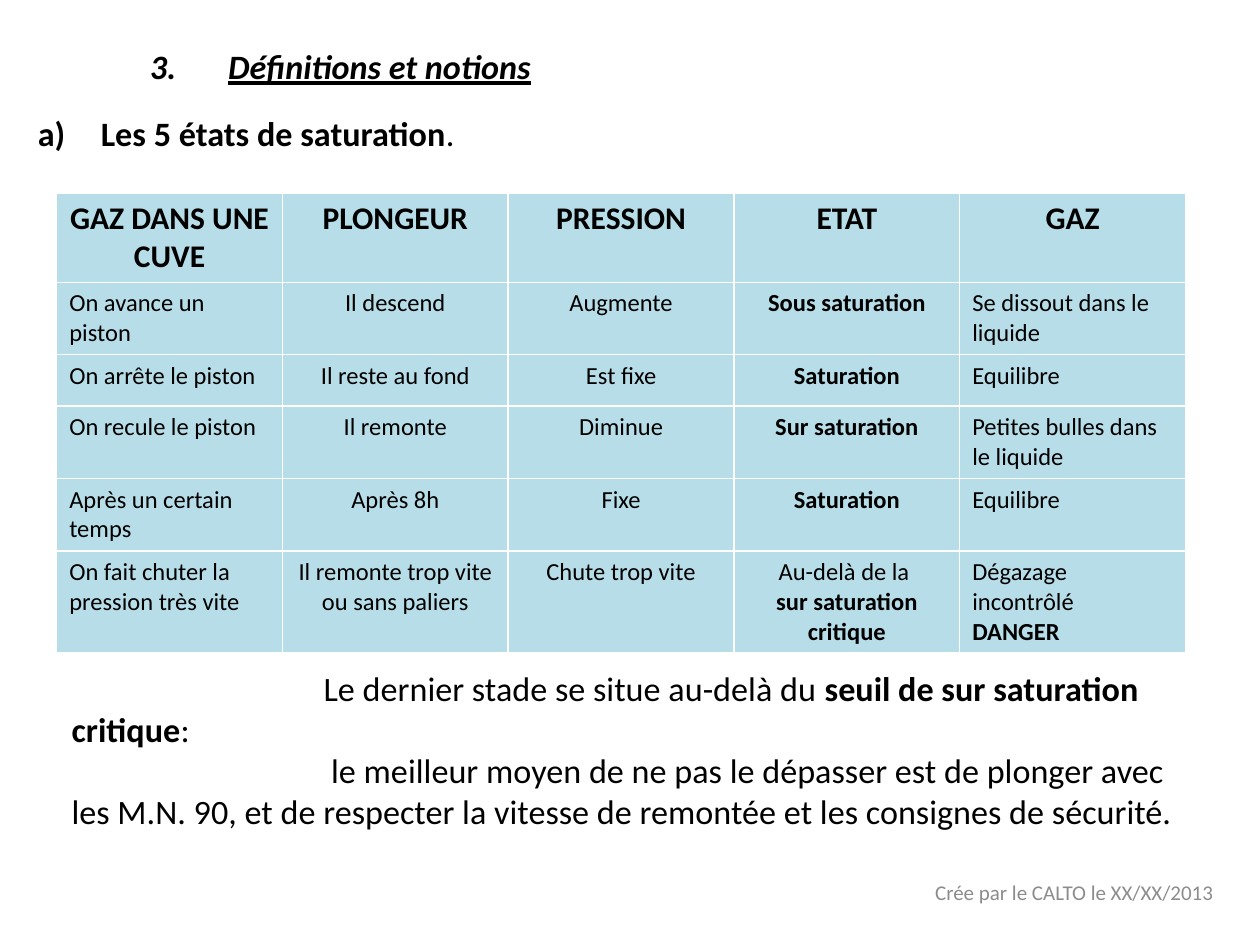
from lxml.etree import SubElement
from pptx import Presentation
from pptx.dml.color import RGBColor
from pptx.enum.text import MSO_ANCHOR, MSO_AUTO_SIZE, PP_ALIGN
from pptx.oxml.ns import qn
from pptx.util import Inches, Pt

BLACK = RGBColor(0x00, 0x00, 0x00)
GREY = RGBColor(0x8C, 0x8C, 0x8C)
PALE_BLUE = RGBColor(0xB7, 0xDE, 0xE8)
FONT = "Calibri"
TEXT_SIZE, HEADER_SIZE, CELL_SIZE, FOOTER_SIZE = 19.5, 18, 14, 12

TITLE = "Définitions et notions"
SUBTITLE = [("Les 5 états de saturation", True), (".", False)]
HEADERS = ["GAZ DANS UNE CUVE", "PLONGEUR", "PRESSION", "ETAT", "GAZ"]
# Each cell lists its paragraphs
STATES = [
    [["On avance un piston"], ["Il descend"], ["Augmente"],
     ["Sous saturation"], ["Se dissout dans le liquide"]],
    [["On arrête le piston"], ["Il reste au fond"], ["Est fixe"],
     ["Saturation"], ["Equilibre"]],
    [["On recule le piston"], ["Il remonte"], ["Diminue"],
     ["Sur saturation"], ["Petites bulles dans le liquide"]],
    [["Après un certain temps"], ["Après 8h"], ["Fixe"],
     ["Saturation"], ["Equilibre"]],
    [["On fait chuter la pression très vite"], ["Il remonte trop vite ou sans paliers"],
     ["Chute trop vite"], ["Au-delà de la ", "sur saturation critique"],
     ["Dégazage incontrôlé", "DANGER"]],
]
BOLD_TEXTS = {"Sous saturation", "Saturation", "Sur saturation",
              "sur saturation critique", "DANGER"}
CENTRED_COLUMNS = (1, 2, 3)
# First-line indent in inches, then runs
CONCLUSION = [
    (2.0, [("Le dernier stade se situe au-delà du ", False),
           ("seuil de sur saturation critique", True), (":", False)]),
    (2.06, [("le meilleur moyen de ne pas le dépasser est de plonger avec les M.N. 90, "
             "et de respecter la vitesse de remontée et les consignes de sécurité.", False)]),
]
FOOTER = "Crée par le CALTO le XX/XX/2013"


def place(shape, left, top, width, height, anchor=MSO_ANCHOR.TOP):
    shape.left, shape.top = Inches(left), Inches(top)
    shape.width, shape.height = Inches(width), Inches(height)
    frame = shape.text_frame
    frame.word_wrap = True
    frame.auto_size = MSO_AUTO_SIZE.NONE
    frame.vertical_anchor = anchor
    return frame


def add_run(paragraph, text, size, bold=False, color=BLACK):
    run = paragraph.add_run()
    run.text = text
    font = run.font
    font.name, font.size, font.bold = FONT, Pt(size), bold
    font.color.rgb = color
    return run


def number(paragraph, style, indent, start=1):
    """Give the paragraph an automatic number with a hanging indent."""
    properties = paragraph._p.get_or_add_pPr()
    properties.set("marL", str(Inches(indent)))
    properties.set("indent", str(-Inches(indent)))
    SubElement(properties, qn("a:buFont"), typeface="+mj-lt")
    SubElement(properties, qn("a:buAutoNum"), type=style, startAt=str(start))


def fill_cell(cell, texts, size, centred, header=False):
    cell.fill.solid()
    cell.fill.fore_color.rgb = PALE_BLUE
    for index, text in enumerate(texts):
        frame = cell.text_frame
        paragraph = frame.add_paragraph() if index else frame.paragraphs[0]
        paragraph.alignment = PP_ALIGN.CENTER if centred else PP_ALIGN.LEFT
        add_run(paragraph, text, size, header or text in BOLD_TEXTS)


def add_states_table(slide):
    rows, columns = len(STATES) + 1, len(HEADERS)
    table = slide.shapes.add_table(rows, columns, Inches(0.45), Inches(1.53),
                                   Inches(8.96), Inches(0.41 * rows)).table
    table.horz_banding = False
    for column, header in enumerate(HEADERS):
        fill_cell(table.cell(0, column), [header], HEADER_SIZE, True, header=True)
    for row, state in enumerate(STATES, start=1):
        for column, texts in enumerate(state):
            fill_cell(table.cell(row, column), texts, CELL_SIZE, column in CENTRED_COLUMNS)


def main():
    presentation = Presentation()
    presentation.slide_width, presentation.slide_height = Inches(10), Inches(7.5)
    slide = presentation.slides.add_slide(presentation.slide_layouts[1])

    frame = place(slide.shapes.title, 1.09, 0.29, 5.48, 0.47, MSO_ANCHOR.MIDDLE)
    title = frame.paragraphs[0]
    title.alignment = PP_ALIGN.LEFT
    number(title, "arabicPeriod", 0.62, start=3)
    run = add_run(title, TITLE, TEXT_SIZE, bold=True)
    run.font.italic = run.font.underline = True

    frame = place(slide.placeholders[1], 0.2, 0.84, 9.21, 0.6)
    subtitle = frame.paragraphs[0]
    subtitle.space_before = Pt(0)
    number(subtitle, "alphaLcParenR", 0.5)
    for text, bold in SUBTITLE:
        add_run(subtitle, text, TEXT_SIZE, bold)

    add_states_table(slide)

    frame = place(slide.shapes.add_textbox(0, 0, 0, 0), 0.47, 5.25, 9.21, 1.57)
    for index, (indent, runs) in enumerate(CONCLUSION):
        paragraph = frame.add_paragraph() if index else frame.paragraphs[0]
        paragraph._p.get_or_add_pPr().set("indent", str(Inches(indent)))
        for text, bold in runs:
            add_run(paragraph, text, TEXT_SIZE, bold)

    frame = place(slide.shapes.add_textbox(0, 0, 0, 0), 6.56, 6.88, 3.17, 0.4,
                  MSO_ANCHOR.MIDDLE)
    frame.paragraphs[0].alignment = PP_ALIGN.RIGHT
    add_run(frame.paragraphs[0], FOOTER, FOOTER_SIZE, color=GREY)

    presentation.save("out.pptx")


if __name__ == "__main__":
    main()
